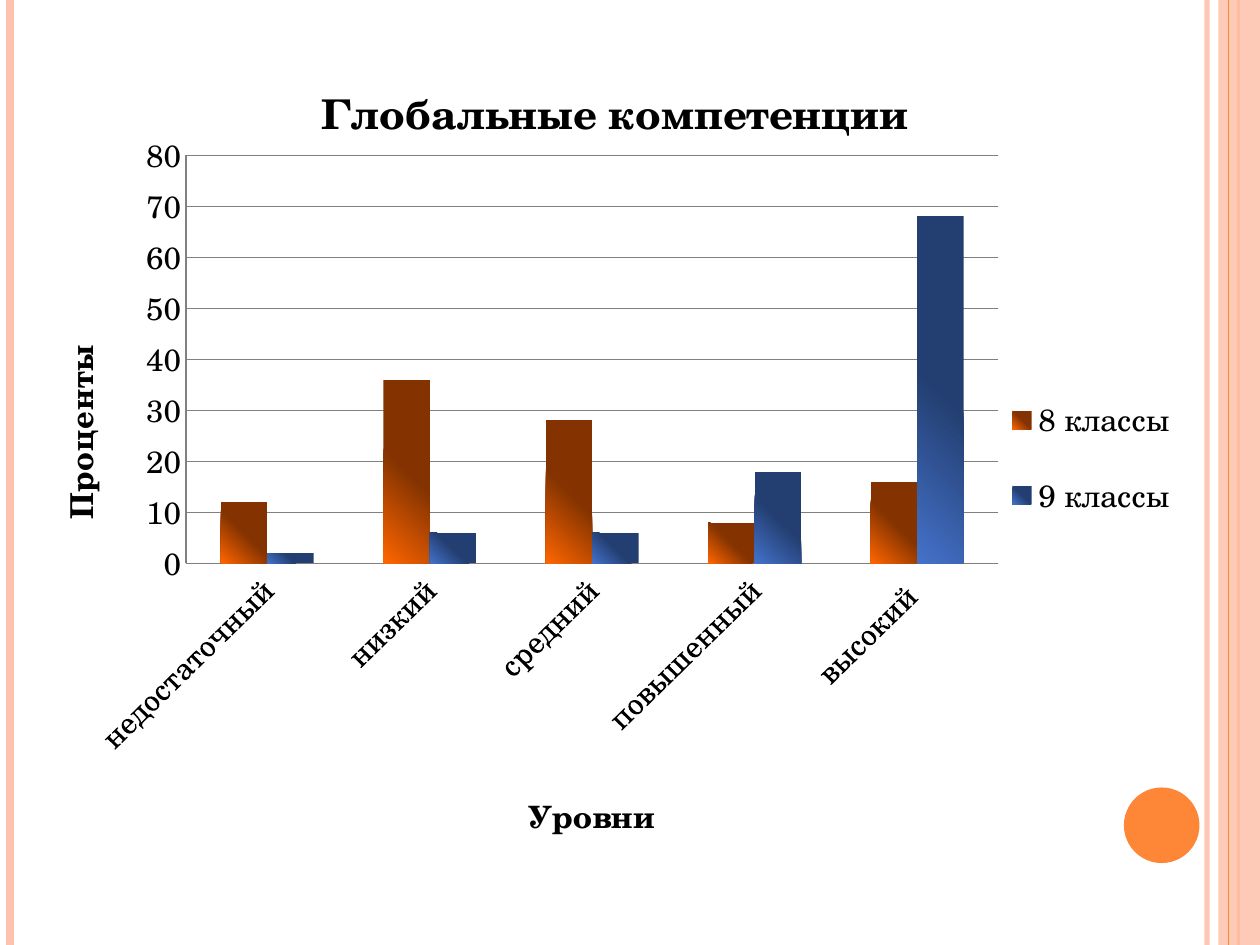
from pptx import Presentation
from pptx.chart.data import CategoryChartData
from pptx.dml.color import RGBColor
from pptx.enum import chart as ch, shapes
from pptx.oxml import parse_xml
from pptx.oxml.ns import nsdecls, qn
from pptx.util import Inches, Pt

PEACH = RGBColor(0xFE, 0xC3, 0xAE)
ORANGE = RGBColor(0xFE, 0x86, 0x37)
BLACK = RGBColor(0, 0, 0)
GRID_GRAY = RGBColor(0x80, 0x80, 0x80)
BAR_GRADIENTS = [
    (RGBColor(0xFF, 0x66, 0x00), RGBColor(0x84, 0x33, 0x00)),
    (RGBColor(0x44, 0x72, 0xCA), RGBColor(0x23, 0x3E, 0x70)),
]
FONT = "TeX Gyre Schola"

LEVELS = ["недостаточный", "низкий", "средний", "повышенный", "высокий "]
RESULTS = {"8 классы": (12, 36, 28, 8, 16), "9 классы": (2, 6, 6, 18, 68)}


def set_alpha(fill_owner, percent):
    color = next(fill_owner.iter(qn("a:srgbClr")))
    color.append(parse_xml(f'<a:alpha {nsdecls("a")} val="{percent * 1000}"/>'))


def add_stripe(slide, x, height, color, width, alpha=100):
    stripe = slide.shapes.add_connector(
        shapes.MSO_CONNECTOR.STRAIGHT, Inches(x), 0, Inches(x), height)
    stripe.line.color.rgb = color
    stripe.line.width = Pt(width)
    properties = stripe._element.spPr
    properties.append(parse_xml(f'<a:effectLst {nsdecls("a")}/>'))
    if alpha < 100:
        set_alpha(properties, alpha)


def add_plain_shape(slide, kind, left, top, width, height, color):
    shape = slide.shapes.add_shape(kind, left, top, width, height)
    shape.shadow.inherit = False
    shape.fill.solid()
    shape.fill.fore_color.rgb = color
    shape.line.fill.background()
    return shape


def add_frame(slide, width, height):
    """Draw the stripes along both edges and the disc at bottom right."""
    add_stripe(slide, 9.58, height, PEACH, 3, alpha=93)
    add_stripe(slide, 0.08, height, PEACH, 4.5)
    add_stripe(slide, 9.83, height, ORANGE, 1.5)
    band_width = Inches(0.33)
    band = add_plain_shape(slide, shapes.MSO_SHAPE.RECTANGLE,
                           width - band_width, 0, band_width, height, PEACH)
    set_alpha(band._element.spPr, 87)
    add_stripe(slide, 9.75, height, ORANGE, 0.75)
    add_plain_shape(slide, shapes.MSO_SHAPE.OVAL, Inches(8.92), Inches(6.25),
                    Inches(0.6), Inches(0.6), ORANGE)


def place(element, index, x, y, size=None, inner=False):
    """Give a chart part a manual layout, in fractions of the chart."""
    for old in element.findall(qn("c:layout")):
        element.remove(old)
    parts = ['<c:layoutTarget val="inner"/>'] if inner else []
    parts += ['<c:xMode val="edge"/>', '<c:yMode val="edge"/>',
              f'<c:x val="{x}"/>', f'<c:y val="{y}"/>']
    if size:
        parts += [f'<c:w val="{size[0]}"/>', f'<c:h val="{size[1]}"/>']
    element.insert(index, parse_xml(
        f'<c:layout {nsdecls("c")}><c:manualLayout>{"".join(parts)}'
        '</c:manualLayout></c:layout>'))


def set_title(heading, title, size, x, y):
    heading.text_frame.text = title
    font = heading.text_frame.paragraphs[0].runs[0].font
    font.size, font.bold, font.name = Pt(size), True, FONT
    font.color.rgb = BLACK
    place(heading._element, 1, x, y)


def fill_bars(series, bright, dark):
    """Fade the bars from a bright lower left corner to a dark far half."""
    properties = series.format.fill._xPr
    properties.insert(0, parse_xml(
        f'<a:gradFill {nsdecls("a")} rotWithShape="1"><a:gsLst>'
        f'<a:gs pos="0"><a:srgbClr val="{bright}"/></a:gs>'
        f'<a:gs pos="50000"><a:srgbClr val="{dark}"/></a:gs>'
        f'<a:gs pos="100000"><a:srgbClr val="{dark}"/></a:gs></a:gsLst>'
        '<a:path path="circle"><a:fillToRect t="100000" r="100000"/></a:path>'
        '</a:gradFill>'))


def style_axis(axis):
    axis.major_tick_mark = axis.minor_tick_mark = ch.XL_TICK_MARK.NONE
    axis.format.line.color.rgb = GRID_GRAY
    axis.format.line.width = Pt(0.75)


def add_results_chart(slide, left, top, width, height):
    data = CategoryChartData()
    data.categories = LEVELS
    for group, percentages in RESULTS.items():
        data.add_series(group, percentages)
    chart = slide.shapes.add_chart(ch.XL_CHART_TYPE.COLUMN_CLUSTERED,
                                   left, top, width, height, data).chart
    chart.font.size, chart.font.name = Pt(18), FONT
    chart.font.color.rgb = BLACK
    set_title(chart.chart_title, "Глобальные компетенции", 24, 0.24, 0.03)
    place(chart._chartSpace.chart.plotArea, 0, 0.13, 0.14, (0.7, 0.52), inner=True)

    levels, percents = chart.category_axis, chart.value_axis
    style_axis(levels)
    style_axis(percents)
    set_title(levels.axis_title, "Уровни ", 18, 0.42, 0.94)
    set_title(percents.axis_title, "Проценты", 18, 0.01, 0.38)
    levels.tick_labels.font.size = Pt(18)
    levels._element.find(qn("c:txPr")).find(qn("a:bodyPr")).set("rot", "-2700000")
    percents.minimum_scale, percents.maximum_scale = 0, 80
    percents.major_unit = 10
    percents.major_gridlines.format.line.color.rgb = GRID_GRAY
    percents.major_gridlines.format.line.width = Pt(0.75)

    chart.has_legend = True
    chart.legend.position = ch.XL_LEGEND_POSITION.RIGHT
    chart.legend.include_in_layout = False
    place(chart.legend._element, 1, 0.83, 0.41, (0.16, 0.23))

    plot = chart.plots[0]
    plot.vary_by_categories = False
    plot.gap_width, plot.overlap = 150, 0
    for series, gradient in zip(plot.series, BAR_GRADIENTS):
        fill_bars(series, *gradient)


def main():
    deck = Presentation()
    deck.slide_width, deck.slide_height = Inches(10), Inches(7.5)
    slide = deck.slides.add_slide(deck.slide_layouts[6])
    add_frame(slide, deck.slide_width, deck.slide_height)
    add_results_chart(slide, Inches(0.28), Inches(0.36), Inches(9.21), Inches(6.38))
    deck.save("out.pptx")


if __name__ == "__main__":
    main()
